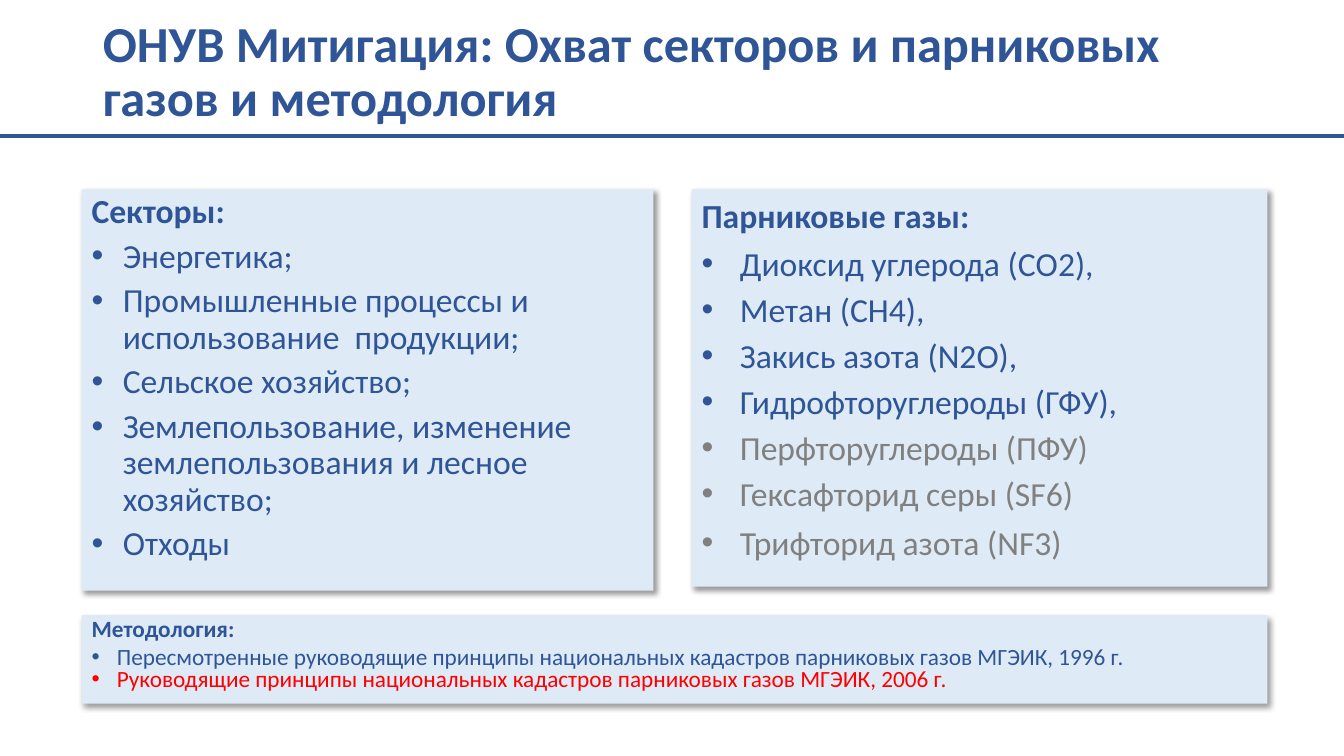
from lxml.etree import SubElement
from pptx import Presentation
from pptx.dml.color import RGBColor
from pptx.enum.shapes import MSO_CONNECTOR as Connector, MSO_SHAPE as Preset
from pptx.enum.text import MSO_ANCHOR as Anchor, MSO_AUTO_SIZE as AutoSize, PP_ALIGN as Align
from pptx.oxml.ns import qn
from pptx.util import Inches, Pt

BLUE, PALE, GREY, RED = "2F5597", "DEEBF7", "808080", "FF0000"
FONT = "Calibri"
WIDTH, HEIGHT = 13.33, 7.5
LEFT, RIGHT, PANEL_TOP, RULE_Y = 0.81, 12.57, 1.88, 1.35

TITLE = "ОНУВ Митигация: Охват секторов и парниковых газов и методология"
METHODS = {
    "heading": "Методология:", "size": 16.6, "spacing": 0.8, "indent": 0.25, "after": 4,
    "items": [
        ("Пересмотренные руководящие принципы национальных кадастров парниковых газов МГЭИК, 1996 г.", BLUE, 0),
        ("Руководящие принципы национальных кадастров парниковых газов МГЭИК, 2006 г.", RED, 0),
    ],
}
SECTORS = {
    "heading": "Секторы:", "size": 24, "spacing": 0.9, "indent": 0.31, "after": 6,
    "items": [
        ("Энергетика;", BLUE, 6),
        ("Промышленные процессы и использование  продукции;", BLUE, 6),
        ("Сельское хозяйство;", BLUE, 6),
        ("Землепользование, изменение землепользования и лесное хозяйство;", BLUE, 6),
        ("Отходы", BLUE, 0),
    ],
}
GASES = {
    "heading": "Парниковые газы:", "size": 24, "spacing": 1.0, "indent": 0.38, "after": 6,
    "items": [
        ("Диоксид углерода (СО2),", BLUE, 4),
        ("Метан (СН4),", BLUE, 4),
        ("Закись азота (N2O),", BLUE, 4),
        ("Гидрофторуглероды (ГФУ),", BLUE, 4),
        ("Перфторуглероды (ПФУ)", GREY, 4),
        ("Гексафторид серы (SF6)", GREY, 6),
        ("Трифторид азота (NF3)", GREY, 0),
    ],
}


def color(value):
    return RGBColor.from_string(value)


def place(shape, left, top, width, height):
    shape.left, shape.top = Inches(left), Inches(top)
    shape.width, shape.height = Inches(width), Inches(height)


def style(para, size, ink, bold, spacing):
    para.alignment = Align.LEFT
    para.line_spacing = spacing
    para.space_before = Pt(0)
    para.font.name = FONT
    para.font.size = Pt(size)
    para.font.bold = bold
    para.font.color.rgb = color(ink)


def set_bullet(para, indent):
    props = para._p.get_or_add_pPr()
    props.set("marL", str(Inches(indent)))
    props.set("indent", str(-Inches(indent)))
    if indent:
        SubElement(props, qn("a:buFont"), typeface="Arial")
        SubElement(props, qn("a:buChar"), char="•")
    else:
        SubElement(props, qn("a:buNone"))


def add_shadow(shape):
    shape.shadow.inherit = False
    effects = shape._element.spPr.find(qn("a:effectLst"))
    shadow = SubElement(effects, qn("a:outerShdw"), blurRad=str(Pt(4)), dist=str(Pt(3)),
                        dir="2700000", algn="tl", rotWithShape="0")
    black = SubElement(shadow, qn("a:srgbClr"), val="000000")
    SubElement(black, qn("a:alpha"), val="40000")


def fill_panel(shape, content):
    shape.fill.solid()
    shape.fill.fore_color.rgb = color(PALE)
    shape.line.fill.background()
    add_shadow(shape)
    frame = shape.text_frame
    frame.word_wrap = True
    frame.auto_size = AutoSize.NONE
    frame.vertical_anchor = Anchor.TOP
    rows = [(content["heading"], BLUE, content["after"])] + content["items"]
    for index, (text, ink, after) in enumerate(rows):
        para = frame.add_paragraph() if index else frame.paragraphs[0]
        para.text = text
        style(para, content["size"], ink, index == 0, content["spacing"])
        para.space_after = Pt(after)
        set_bullet(para, content["indent"] if index else 0)


def main():
    deck = Presentation()
    deck.slide_width, deck.slide_height = Inches(WIDTH), Inches(HEIGHT)
    page = deck.slides.add_slide(deck.slide_layouts[1])

    title = page.shapes.title
    place(title, 0.92, 0.1, 11.5, 1.25)
    title.text_frame.text = TITLE
    title.text_frame.auto_size = AutoSize.NONE
    title.text_frame.vertical_anchor = Anchor.MIDDLE
    style(title.text_frame.paragraphs[0], 36, BLUE, True, 0.9)

    methods = page.placeholders[1]
    place(methods, LEFT, 6.1, RIGHT - LEFT, 0.88)
    fill_panel(methods, METHODS)

    rule = page.shapes.add_connector(Connector.STRAIGHT, 0, Inches(RULE_Y), Inches(WIDTH), Inches(RULE_Y))
    rule.line.color.rgb = color(BLUE)
    rule.line.width = Pt(3)
    SubElement(rule._element.spPr, qn("a:effectLst"))

    for content, left, right, height in [(SECTORS, LEFT, 6.48, 3.98), (GASES, 6.86, RIGHT, 3.94)]:
        panel = page.shapes.add_shape(Preset.RECTANGLE, Inches(left), Inches(PANEL_TOP),
                                      Inches(right - left), Inches(height))
        fill_panel(panel, content)

    deck.save("out.pptx")


if __name__ == "__main__":
    main()
